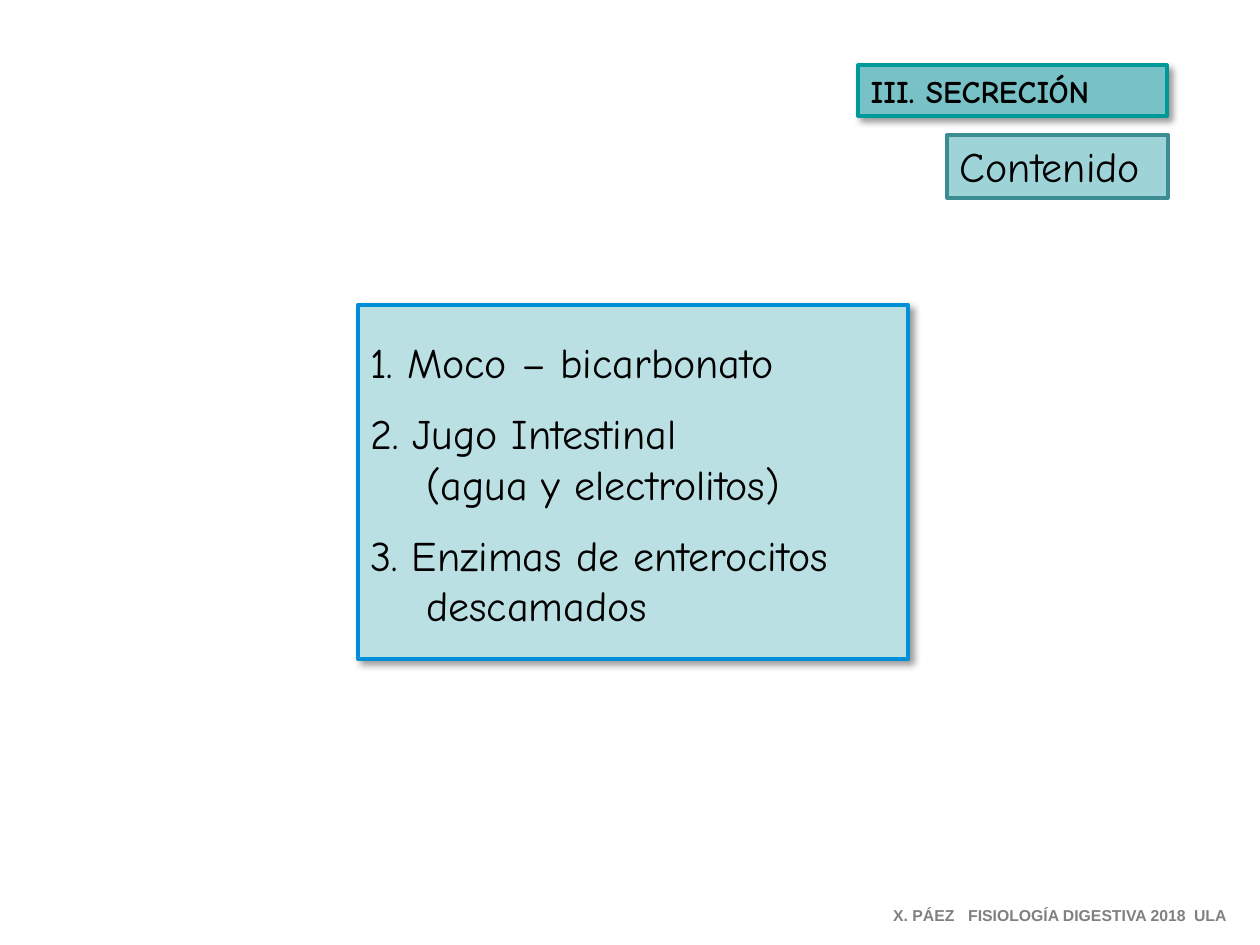
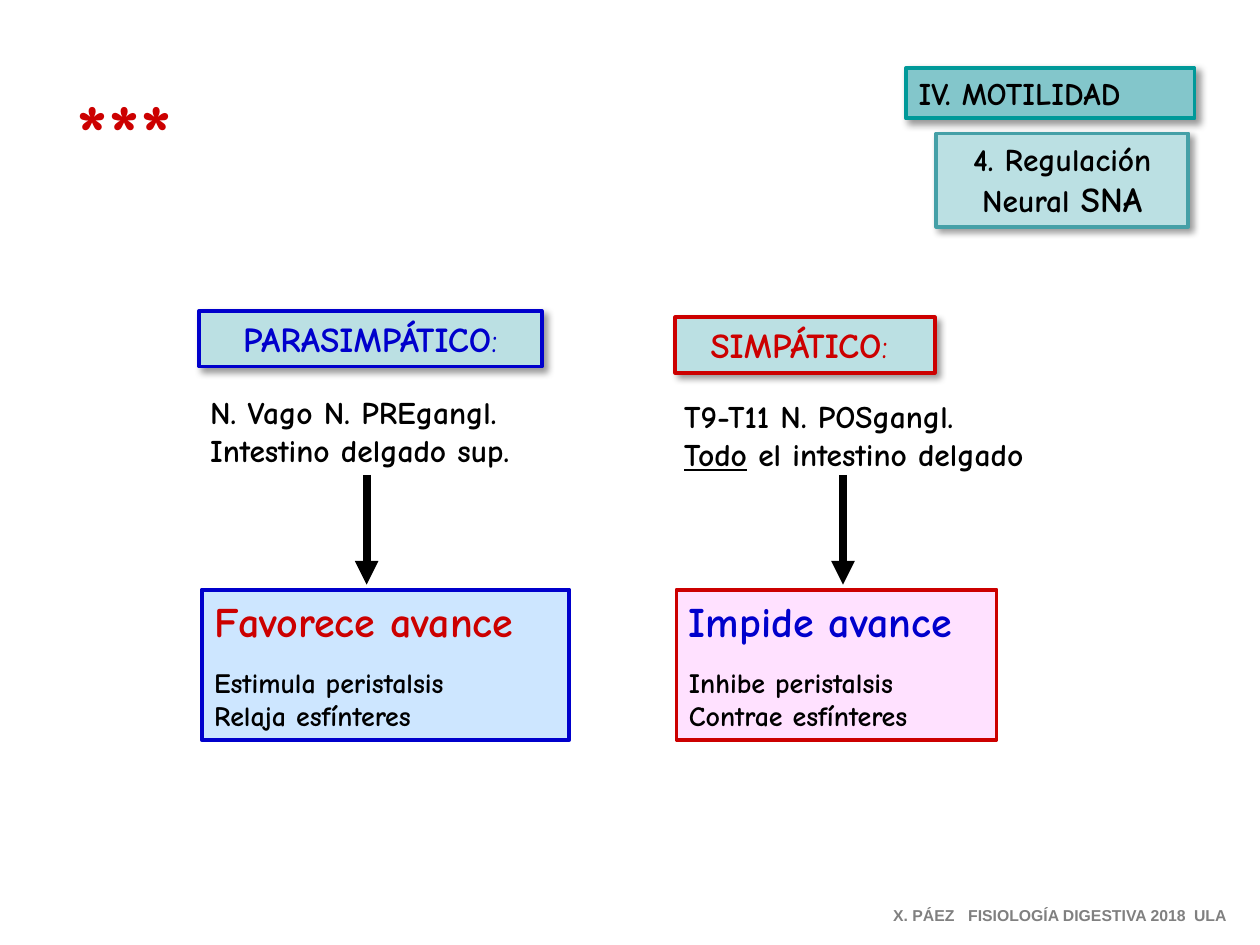
import lxml.etree
import pptx
import pptx.dml.color
import pptx.enum.shapes
import pptx.enum.text
import pptx.oxml.ns
import pptx.util

Pt = pptx.util.Pt
RGBColor = pptx.dml.color.RGBColor
qn = pptx.oxml.ns.qn
SubElement = lxml.etree.SubElement
RECTANGLE = pptx.enum.shapes.MSO_SHAPE.RECTANGLE
LEFT = pptx.enum.text.PP_ALIGN.LEFT
CENTER = pptx.enum.text.PP_ALIGN.CENTER

BLACK = RGBColor(0x00, 0x00, 0x00)
GREY = RGBColor(0x80, 0x80, 0x80)
BLUE = RGBColor(0x00, 0x00, 0xCC)
RED = RGBColor(0xCC, 0x00, 0x00)
SKY = RGBColor(0x00, 0x8F, 0xD6)
TEAL = RGBColor(0x00, 0x99, 0x99)
DARK_TEAL = RGBColor(0x3C, 0x8C, 0x93)
MID_TEAL = RGBColor(0x45, 0xA0, 0xA7)
PALE_TEAL = RGBColor(0xBB, 0xE0, 0xE3)
SOFT_TEAL = RGBColor(0x9E, 0xD3, 0xD7)
TITLE_TEAL = RGBColor(0x77, 0xC1, 0xC7)
TITLE_TEAL_LIGHT = RGBColor(0x83, 0xC6, 0xCB)
PALE_BLUE = RGBColor(0xCD, 0xE6, 0xFF)
PALE_PINK = RGBColor(0xFF, 0xE1, 0xFF)

BODY = {"name": "Comic Neue", "size": Pt(24), "bold": False, "color": BLACK}
STRONG = BODY | {"size": Pt(18), "bold": True}
HEADING = STRONG | {"size": Pt(20)}
FOOTER = {"name": "Arial", "size": Pt(9), "bold": True, "color": GREY}


def style_box(shape, fill, line, shadow=True):
    shape.fill.solid()
    shape.fill.fore_color.rgb = fill
    shape.line.color.rgb = line
    shape.line.width = Pt(2.25)
    shape.shadow.inherit = False
    if shadow:
        effects = shape.element.spPr.find(qn("a:effectLst"))
        outer = SubElement(effects, qn("a:outerShdw"), blurRad=str(Pt(4)), dist=str(Pt(3)), dir="2700000")
        color = SubElement(outer, qn("a:srgbClr"), val="000000")
        SubElement(color, qn("a:alpha"), val="40000")


def write_text(shape, paragraphs, align=LEFT):
    frame = shape.text_frame
    frame.word_wrap = True
    frame.auto_size = pptx.enum.text.MSO_AUTO_SIZE.NONE
    frame.vertical_anchor = pptx.enum.text.MSO_ANCHOR.TOP
    for index, runs in enumerate(paragraphs):
        paragraph = frame.add_paragraph() if index else frame.paragraphs[0]
        paragraph.alignment = align
        for text, formats in runs:
            run = paragraph.add_run()
            run.text = text
            for name, value in formats.items():
                if name == "color":
                    run.font.color.rgb = value
                else:
                    setattr(run.font, name, value)
    return frame


presentation = pptx.Presentation()
presentation.slide_width = Pt(720)
presentation.slide_height = Pt(540)

section_titles = [
    ("III. SECRECIÓN", (490.3, 37.4, 176.4, 28.8), TITLE_TEAL),
    ("IV. MOTILIDAD", (517.7, 38.9, 164.9, 28.8), TITLE_TEAL_LIGHT),
]
slides = []
for text, box, fill in section_titles:
    slide = presentation.slides.add_slide(presentation.slide_layouts[5])
    title = slide.shapes.title
    title.left, title.top, title.width, title.height = map(Pt, box)
    style_box(title, fill, TEAL)
    write_text(title, [[(text, STRONG)]])

    footer = slide.shapes.add_textbox(Pt(503.3), Pt(514), Pt(208.8), Pt(18))
    frame = write_text(footer, [[("X. PÁEZ\tFISIOLOGÍA DIGESTIVA 2018\tULA", FOOTER)]])
    properties = frame.paragraphs[0]._p.get_or_add_pPr()
    tabs = SubElement(properties, qn("a:tabLst"))
    for position in (42.9, 172):
        SubElement(tabs, qn("a:tab"), pos=str(Pt(position)), algn="l")
    slides.append(slide)

secretion, motility = slides

contents = secretion.shapes.add_shape(RECTANGLE, Pt(204.5), Pt(174.2), Pt(314.6), Pt(202.3))
style_box(contents, PALE_TEAL, SKY)
topics = [
    "1. Moco – bicarbonato",
    "2. Jugo Intestinal",
    "(agua y electrolitos)",
    "3. Enzimas de enterocitos",
    "descamados",
]
frame = write_text(contents, [[(topic, BODY)] for topic in topics])
frame.margin_top = Pt(18)
for index, paragraph in enumerate(frame.paragraphs):
    if not topics[index][0].isdigit():
        paragraph._p.get_or_add_pPr().set("marL", str(Pt(32)))
    elif index:
        paragraph.space_before = Pt(12)

subtitle = secretion.shapes.add_shape(RECTANGLE, Pt(541.4), Pt(77), Pt(126), Pt(36))
style_box(subtitle, SOFT_TEAL, DARK_TEAL, shadow=False)
write_text(subtitle, [[("Contenido", BODY)]])

subtitle = motility.shapes.add_shape(RECTANGLE, Pt(535), Pt(76.3), Pt(144), Pt(53.3))
style_box(subtitle, PALE_TEAL, MID_TEAL)
write_text(subtitle, [[("4. Regulación Neural ", STRONG), ("SNA", HEADING)]], CENTER)

columns = [
    {
        "name": "PARASIMPÁTICO", "colon": ":", "color": BLUE, "accent": RED, "fill": PALE_BLUE,
        "heading": (113.8, 177.8, 195.8, 31.7),
        "nerves": (113, 221, 211.7, 51.1),
        "effect": (115.2, 337, 210.2, 85.7),
        "arrow": 209.5,
        "nerve_lines": [[("N. Vago N. PREgangl.", STRONG)], [("Intestino delgado sup.", STRONG)]],
        "effect_lines": ["Favorece avance", "Estimula peristalsis", "Relaja esfínteres"],
    },
    {
        "name": "SIMPÁTICO", "colon": ": ", "color": RED, "accent": BLUE, "fill": PALE_PINK,
        "heading": (385.9, 181.4, 148.3, 31.7),
        "nerves": (383.8, 223.2, 236.2, 51.1),
        "effect": (386.6, 337, 182.9, 85.7),
        "arrow": 481.7,
        "nerve_lines": [
            [("T9-T11 N. POSgangl.", STRONG)],
            [("Todo", STRONG | {"underline": True}), (" el intestino delgado", STRONG)],
        ],
        "effect_lines": ["Impide avance", "Inhibe peristalsis", "Contrae esfínteres"],
    },
]
for column in columns:
    heading = motility.shapes.add_shape(RECTANGLE, *map(Pt, column["heading"]))
    style_box(heading, PALE_TEAL, column["color"])
    heading_format = HEADING | {"color": column["color"]}
    write_text(heading, [[(column["name"], heading_format), (column["colon"], heading_format | {"bold": False})]], CENTER)

    nerves = motility.shapes.add_textbox(*map(Pt, column["nerves"]))
    write_text(nerves, column["nerve_lines"])

    effect = motility.shapes.add_shape(RECTANGLE, *map(Pt, column["effect"]))
    style_box(effect, column["fill"], column["color"], shadow=False)
    summary, *details = column["effect_lines"]
    effect_lines = [[(summary, STRONG | {"size": Pt(24), "color": column["accent"]})]]
    effect_lines += [[(detail, STRONG | {"size": Pt(16)})] for detail in details]
    frame = write_text(effect, effect_lines)
    frame.paragraphs[1].space_before = Pt(10.8)

    arrow = motility.shapes.add_connector(
        pptx.enum.shapes.MSO_CONNECTOR.STRAIGHT,
        Pt(column["arrow"]), Pt(271.4), Pt(column["arrow"]), Pt(334.1),
    )
    arrow.line.color.rgb = BLACK
    arrow.line.width = Pt(4.5)
    arrow_properties = arrow.element.spPr
    SubElement(arrow_properties.find(qn("a:ln")), qn("a:tailEnd"), type="triangle")
    SubElement(arrow_properties, qn("a:effectLst"))

stars = motility.shapes.add_textbox(Pt(36.7), Pt(42.5), Pt(91.4), Pt(65.5))
frame = write_text(stars, [[("***", STRONG | {"size": Pt(48), "color": RED})]])
star_fill = frame.paragraphs[0].runs[0].font._element.find(qn("a:solidFill"))
star_effects = lxml.etree.Element(qn("a:effectLst"))
star_fill.addnext(star_effects)
star_shadow = SubElement(star_effects, qn("a:outerShdw"), blurRad="0", dist=str(Pt(3)), dir="2700000")
SubElement(star_shadow, qn("a:srgbClr"), val="000000")

presentation.save("out.pptx")
